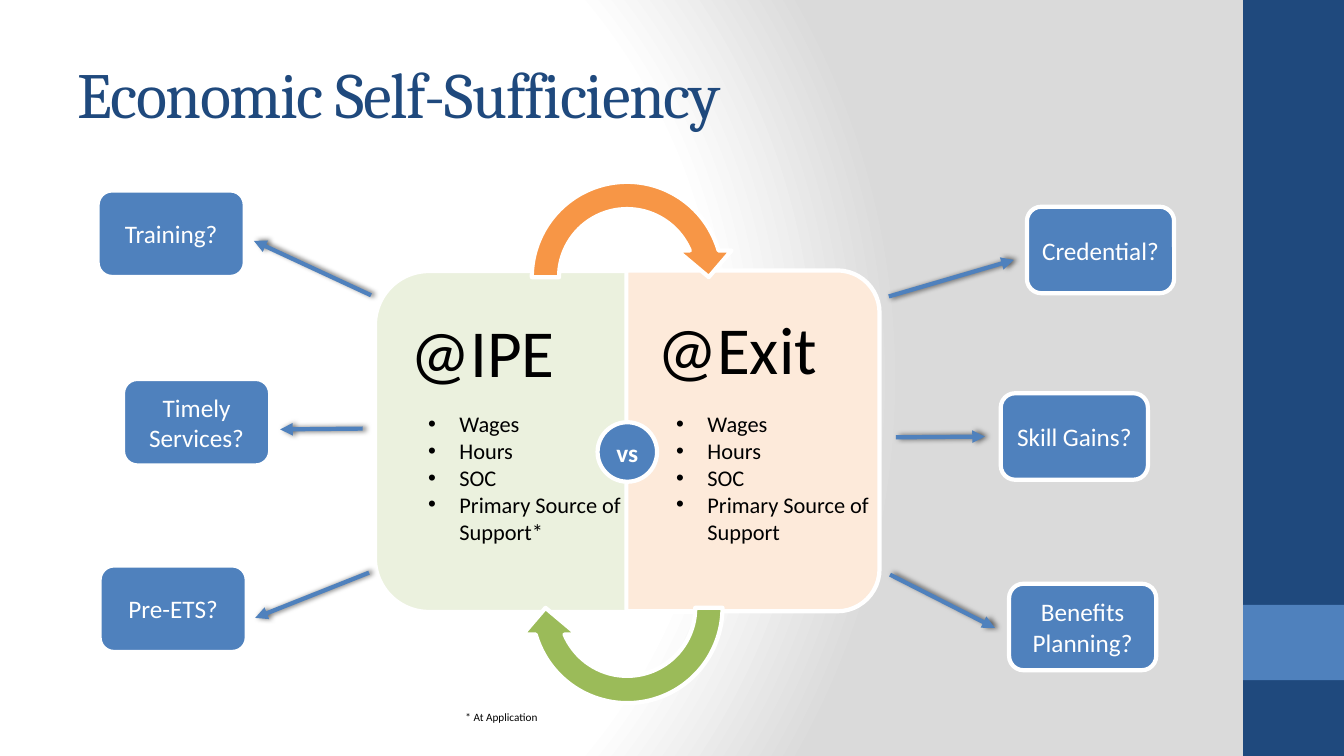
import pptx
import pptx.dml.color
import pptx.enum.shapes
import pptx.enum.text
import pptx.oxml
import pptx.util

Cm = pptx.util.Cm
Pt = pptx.util.Pt
Kind = pptx.enum.shapes.MSO_SHAPE
Align = pptx.enum.text.PP_ALIGN
Anchor = pptx.enum.text.MSO_ANCHOR
NS = 'xmlns:a="http://schemas.openxmlformats.org/drawingml/2006/main"'

NAVY, BLUE, WHITE, BLACK = "1F497D", "4F81BD", "FFFFFF", "000000"
ORANGE, GREEN, PEACH, MINT = "F79646", "9BBB59", "FDEADA", "EBF1DE"


def tint(code):
    return pptx.dml.color.RGBColor.from_string(code)


def node(tag, inner=""):
    """Make one DrawingML element from its tag with attributes."""
    name = tag.split()[0]
    return pptx.oxml.parse_xml(f"<a:{tag} {NS}>{inner}</a:{name}>")


class Board:
    """Draws on one slide in one style; all lengths are in cm."""

    font = "Calibri"
    edge = 3

    def __init__(self, slide):
        self.slide = slide

    def ground(self, stops):
        fill = self.slide.background.fill
        fill.gradient()
        old = next(self.slide.element.iter("{*}gradFill"))
        marks = "".join(f'<a:gs pos="{pos * 1000}"><a:srgbClr val="{code}"/></a:gs>'
                        for pos, code in stops)
        new = node('gradFill rotWithShape="1"',
                   f'<a:gsLst>{marks}</a:gsLst><a:path path="circle">'
                   '<a:fillToRect l="20000" t="50000" r="100000" b="50000"/></a:path>')
        old.getparent().replace(old, new)

    def add(self, para, text, size, color=BLACK, font=None, bold=False):
        run = para.add_run()
        run.text = text
        run.font.size = Pt(size)
        run.font.name = font or self.font
        run.font.bold = bold
        run.font.color.rgb = tint(color)
        return run

    def shape(self, kind, box, fill, edge=True, turn=0, bends=()):
        item = self.slide.shapes.add_shape(kind, *map(Cm, box))
        item.shadow.inherit = False
        item.fill.solid()
        item.fill.fore_color.rgb = tint(fill)
        if edge:
            item.line.color.rgb = tint(WHITE)
            item.line.width = Pt(self.edge)
        else:
            item.line.fill.background()
        item.rotation = turn
        for i, bend in enumerate(bends):
            item.adjustments[i] = bend
        return item

    def label(self, kind, box, text, bold=False, pad=0.25):
        frame = self.shape(kind, box, BLUE).text_frame
        frame.word_wrap = True
        frame.vertical_anchor = Anchor.MIDDLE
        frame.margin_left = frame.margin_right = Cm(pad)
        para = frame.paragraphs[0]
        para.alignment = Align.CENTER
        self.add(para, text, 18, WHITE, bold=bold)

    def frame(self, box, pads=(0.25, 0.13, 0.25, 0.13)):
        frame = self.slide.shapes.add_textbox(*map(Cm, box)).text_frame
        frame.word_wrap = True
        (frame.margin_left, frame.margin_top,
         frame.margin_right, frame.margin_bottom) = map(Cm, pads)
        return frame

    def title(self, box, text):
        frame = self.frame(box)
        frame.vertical_anchor = Anchor.MIDDLE
        run = self.add(frame.paragraphs[0], text, 46, NAVY, "Cambria")
        run._r.get_or_add_rPr().set("spc", "-100")

    def head(self, box, pads, text):
        para = self.frame(box, pads).paragraphs[0]
        para.line_spacing = 0.9
        self.add(para, text, 48)

    def note(self, box, text):
        self.add(self.frame(box).paragraphs[0], text, 8)

    def bullets(self, box, lines):
        frame = self.frame(box)
        for i, line in enumerate(lines):
            para = frame.add_paragraph() if i else frame.paragraphs[0]
            props = para._p.get_or_add_pPr()
            props.set("marL", str(Cm(0.79)))
            props.set("indent", str(-Cm(0.79)))
            props.append(node('buFont typeface="Arial"'))
            props.append(node('buChar char="•"'))
            self.add(para, line, 16)

    def arrow(self, start, end):
        kind = pptx.enum.shapes.MSO_CONNECTOR.STRAIGHT
        item = self.slide.shapes.add_connector(kind, *map(Cm, start + end))
        item.line.color.rgb = tint(BLUE)
        item.line.width = Pt(self.edge)
        item.line._get_or_add_ln().append(node('tailEnd type="triangle"'))
        item._element.spPr.append(node(
            "effectLst",
            f'<a:outerShdw blurRad="{Pt(4)}" dist="{Pt(2)}" dir="0">'
            f'<a:srgbClr val="{BLACK}"><a:alpha val="60000"/></a:srgbClr>'
            '</a:outerShdw>'))


def main():
    deck = pptx.Presentation()
    deck.slide_width, deck.slide_height = Cm(33.87), Cm(19.05)
    board = Board(deck.slides.add_slide(deck.slide_layouts[6]))

    # Background, side band and title
    board.ground([(0, WHITE), (75, WHITE), (100, "DADADA")])
    board.shape(Kind.RECTANGLE, (31.33, 0, 2.54, 19.05), NAVY, edge=False)
    board.shape(Kind.RECTANGLE, (31.33, 15.24, 2.54, 1.9), BLUE, edge=False)
    board.title((1.7, 0.76, 28.22, 3.18), "Economic Self-Sufficiency")

    # Two halves of the centre panel
    halves = [
        ((9.22, 7.06, 8.59, 8.13), 270, MINT, "@IPE",
         (9.83, 7.21, 7.72, 7.77), (0.51, 0.84, 0.76, 0.84)),
        ((14.68, 7.92, 8.59, 6.38), 90, PEACH, "@Exit",
         (15.8, 7.14, 6.07, 7.95), (0.76, 0.84, 0.51, 0.84)),
    ]
    for box, turn, fill, text, area, pads in halves:
        board.shape(Kind.ROUND_2_SAME_RECTANGLE, box, fill, turn=turn, bends=(0.167, 0))
        board.head(area, pads, text)

    # Curved arrows above and below
    for top, turn, fill in [(4.24, 0, ORANGE), (12.57, 180, GREEN)]:
        board.shape(Kind.CIRCULAR_ARROW, (13.06, top, 5.49, 5.49), fill, turn=turn,
                    bends=(0.125, 11.423, 204.577, 108, 0.125))

    # Outer topics, each with its arrow
    topics = [
        ("Training?", (2.46, 4.8), (9.35, 7.44), (6.4, 6.07)),
        ("Credential?", (25.88, 5.21), (22.4, 7.47), (25.55, 6.55)),
        ("Timely Services?", (3.1, 9.55), (9.14, 10.8), (7.06, 10.82)),
        ("Skill Gains?", (25.22, 9.91), (22.58, 11.02), (24.82, 11)),
        ("Pre-ETS?", (2.51, 14.25), (9.3, 14.43), (6.43, 15.57)),
        ("Benefits Planning?", (25.43, 14.71), (22.43, 14.48), (25.07, 15.82)),
    ]
    for text, place, start, end in topics:
        board.arrow(start, end)
        board.label(Kind.ROUNDED_RECTANGLE, place + (3.71, 2.18), text)

    # Lists, badge and footnote
    for left, mark in [(10.54, "*"), (16.79, "")]:
        board.bullets((left, 10.21, 5.38, 3.68),
                      ["Wages", "Hours", "SOC", "Primary Source of Support" + mark])
    board.label(Kind.OVAL, (15.06, 10.64, 1.5, 1.5), "vs", bold=True, pad=0)
    board.note((11.48, 17.78, 7.9, 0.61), "* At Application")

    deck.save("out.pptx")


if __name__ == "__main__":
    main()
